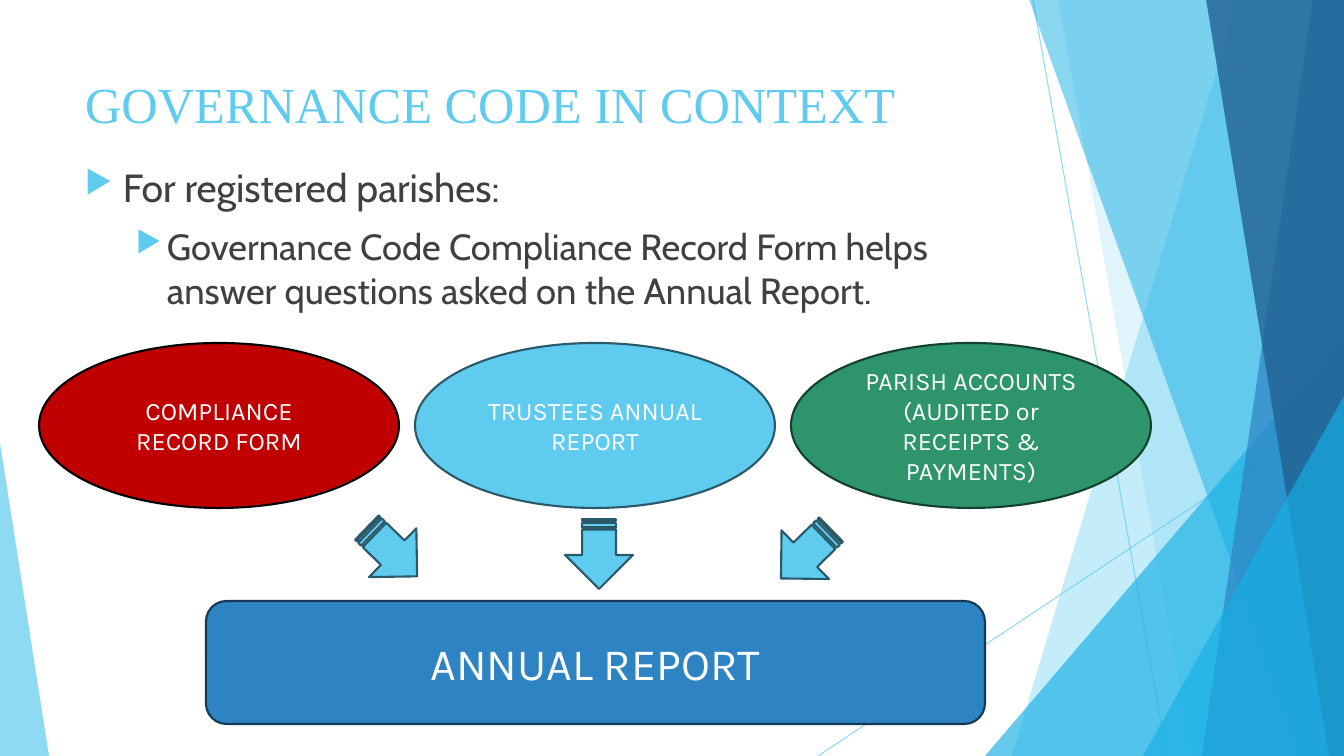
from lxml import etree
from pptx import Presentation
from pptx.dml.color import RGBColor
from pptx.enum.shapes import MSO_CONNECTOR, MSO_SHAPE
from pptx.enum.text import MSO_ANCHOR, PP_ALIGN
from pptx.oxml.ns import qn
from pptx.util import Pt

SCALE = 914400 / 100.8
WIDTH, HEIGHT = 1344, 756
TOP, MIDDLE = MSO_ANCHOR.TOP, MSO_ANCHOR.MIDDLE
LEFT, CENTER = PP_ALIGN.LEFT, PP_ALIGN.CENTER
STRAIGHT = MSO_CONNECTOR.STRAIGHT
TRIANGLE, ELLIPSE = MSO_SHAPE.ISOSCELES_TRIANGLE, MSO_SHAPE.OVAL
ROUNDED, ARROW = MSO_SHAPE.ROUNDED_RECTANGLE, MSO_SHAPE.STRIPED_RIGHT_ARROW

SKY, AZURE, BLUE, NAVY = "5FCBEF", "17B0E4", "2E83C3", "226292"
SKY_EDGE = "2A5969"

RAYS = [(1033, 0, 1167, 756), (1344, 406, 818, 756)]
BANDS = [
    ("quad", (1238, 1012, 1344), SKY, 36),
    ("quad", (1058, 1192, 1344), SKY, 20),
    ("triangle", (985, 336, 359, 420, 1), AZURE, 66),
    ("quad", (1029, 1301, 1344), AZURE, 50),
    ("quad", (1313, 1202, 1344), BLUE, 70),
    ("quad", (1206, 1329, 1344), NAVY, 80),
    ("triangle", (1143, 396, 201, 360, 1), AZURE, 66),
    ("triangle", (0, 443, 49, 313, 0), SKY, 70),
]

TITLE = "GOVERNANCE CODE IN CONTEXT"
TITLE_BOX = (75, 68, 948, 145)
TITLE_FORMAT = {"name": "Times New Roman", "size": Pt(36), "bold": False}
BODY_BOX = (75, 158, 948, 478)
BULLETS = [
    ("For registered parishes:", 0, 38, 38, 28),
    ("Governance Code Compliance Record Form helps answer questions asked on the Annual Report.",
     1, 82, 31, 26),
]

REPORT = ("ANNUAL REPORT", (206, 601, 779, 123), BLUE, "143955")
SOURCES = [
    ("COMPLIANCE RECORD FORM", "C00000", "000000"),
    ("TRUSTEES ANNUAL REPORT", SKY, SKY_EDGE),
    ("PARISH ACCOUNTS (AUDITED or RECEIPTS & PAYMENTS)", "2E946B", "14412F"),
]
SOURCE_LEFT, SOURCE_TOP, SOURCE_STEP = 39, 343, 376
SOURCE_SIZE = (360, 165)
ARROWS = [(357, 518, 44.1), (564, 520, 90), (771, 520, 135.7)]
ARROW_SIZE = (70, 68)


def px(value):
    return round(value * SCALE)


def box(values):
    return [px(value) for value in values]


def color(value):
    return RGBColor.from_string(value)


def add_alpha(shape, percent):
    for node in shape._element.iter(qn("a:srgbClr")):
        etree.SubElement(node, qn("a:alpha"), val=str(percent * 1000))


def paint(shape, fill, edge=None):
    shape.shadow.inherit = False
    shape.fill.solid()
    shape.fill.fore_color.rgb = color(fill)
    if edge:
        shape.line.color.rgb = color(edge)
        shape.line.width = Pt(1.5)
    else:
        shape.line.fill.background()


def write(paragraph, text, font_format, font_color, alignment):
    paragraph.alignment = alignment
    run = paragraph.add_run()
    run.text = text
    for name, value in font_format.items():
        setattr(run.font, name, value)
    run.font.color.rgb = color(font_color)


def add_ray(slide, ends):
    ray = slide.shapes.add_connector(STRAIGHT, *box(ends))
    ray.line.color.rgb = color(SKY)
    ray.line.width = Pt(0.75)
    add_alpha(ray, 70)
    etree.SubElement(ray._element.spPr, qn("a:effectLst"))


def add_band(slide, kind, numbers, fill, opacity):
    if kind == "quad":
        top_left, bottom_left, right = numbers
        builder = slide.shapes.build_freeform(top_left, -1, scale=SCALE)
        builder.add_line_segments([(right, -1), (right, HEIGHT), (bottom_left, HEIGHT)])
        band = builder.convert_to_shape()
    else:
        *frame, apex = numbers
        band = slide.shapes.add_shape(TRIANGLE, *box(frame))
        band.adjustments[0] = apex
    paint(band, fill)
    add_alpha(band, opacity)


def add_title(slide):
    title = slide.shapes.title
    title.left, title.top, title.width, title.height = box(TITLE_BOX)
    title.text_frame.vertical_anchor = TOP
    title.text_frame.word_wrap = True
    write(title.text_frame.paragraphs[0], TITLE, TITLE_FORMAT, SKY, LEFT)


def add_body(slide):
    frame = slide.shapes.add_textbox(*box(BODY_BOX)).text_frame
    frame.word_wrap = True
    for index, (text, level, margin, hanging, size) in enumerate(BULLETS):
        paragraph = frame.add_paragraph() if index else frame.paragraphs[0]
        paragraph.level = level
        paragraph.space_before = Pt(10)
        write(paragraph, text, {"name": "Cabin", "size": Pt(size)}, "404040", LEFT)
        properties = paragraph._p.get_or_add_pPr()
        properties.set("marL", str(px(margin)))
        properties.set("indent", str(-px(hanging)))
        bullet_color = etree.SubElement(properties, qn("a:buClr"))
        etree.SubElement(bullet_color, qn("a:srgbClr"), val=SKY)
        etree.SubElement(properties, qn("a:buSzPct"), val="80000")
        etree.SubElement(properties, qn("a:buChar"), char="▶")


def add_label(slide, kind, text, frame, fill, edge, size):
    shape = slide.shapes.add_shape(kind, *box(frame))
    paint(shape, fill, edge)
    shape.text_frame.word_wrap = True
    shape.text_frame.vertical_anchor = MIDDLE
    write(shape.text_frame.paragraphs[0], text,
          {"name": "Karla", "size": Pt(size)}, "FFFFFF", CENTER)


def main():
    presentation = Presentation()
    presentation.slide_width, presentation.slide_height = px(WIDTH), px(HEIGHT)
    slide = presentation.slides.add_slide(presentation.slide_layouts[5])
    for ends in RAYS:
        add_ray(slide, ends)
    for band in BANDS:
        add_band(slide, *band)
    add_title(slide)
    add_body(slide)
    add_label(slide, ROUNDED, *REPORT, 32)
    for index, (text, fill, edge) in enumerate(SOURCES):
        frame = (SOURCE_LEFT + index * SOURCE_STEP, SOURCE_TOP, *SOURCE_SIZE)
        add_label(slide, ELLIPSE, text, frame, fill, edge, 18)
    for left, top, rotation in ARROWS:
        arrow = slide.shapes.add_shape(ARROW, *box((left, top, *ARROW_SIZE)))
        arrow.rotation = rotation
        paint(arrow, SKY, SKY_EDGE)
    presentation.save("out.pptx")


if __name__ == "__main__":
    main()
